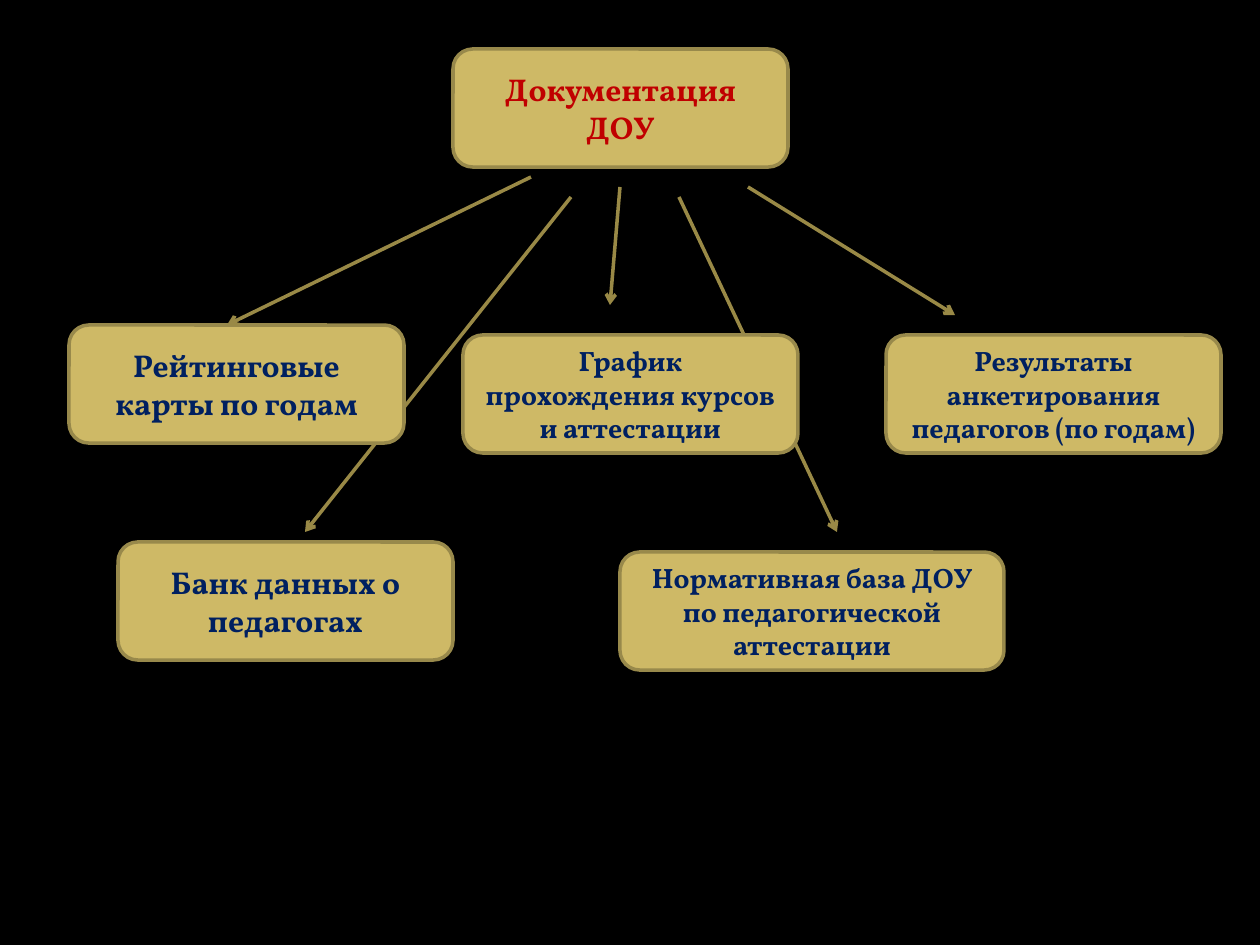
from lxml import etree
from pptx import Presentation
from pptx.dml.color import RGBColor
from pptx.enum.shapes import MSO_CONNECTOR, MSO_SHAPE
from pptx.enum.text import MSO_ANCHOR, PP_ALIGN
from pptx.oxml.ns import qn
from pptx.util import Emu, Pt

LINE, ROUNDED = MSO_CONNECTOR.STRAIGHT, MSO_SHAPE.ROUNDED_RECTANGLE
MIDDLE, CENTER = MSO_ANCHOR.MIDDLE, PP_ALIGN.CENTER
PX = 914400 / 126
RED, NAVY = "C00000", "002060"
GOLD, BORDER, ARROW = "CEB966", "98894B", "998946"
BOX_W, BOX_H = 335, 118


def px(*values):
    return [Emu(round(v * PX)) for v in values]


def rgb(color):
    return RGBColor.from_string(color)


prs = Presentation()
prs.slide_width, prs.slide_height = px(1260, 945)
s = prs.slides.add_slide(prs.slide_layouts[6])
s.background.fill.solid()
s.background.fill.fore_color.rgb = rgb("000000")

# Boxes: left, top, width, text, size, text colour
boxes = [
    (453, 49, BOX_W, "Документация ДОУ", 18, RED),
    (118, 542, BOX_W, "Банк данных о педагогах", 18, NAVY),
    (886, 335, BOX_W, "Результаты анкетирования педагогов (по годам)", 16, NAVY),
    (463, 335, BOX_W, "График прохождения курсов и аттестации", 16, NAVY),
    (69, 325, BOX_W, "Рейтинговые карты по годам", 18, NAVY),
    (620, 552, 384, "Нормативная база ДОУ по педагогической аттестации", 16, NAVY),
]
for x, y, w, text, size, color in boxes:
    box = s.shapes.add_shape(ROUNDED, *px(x, y, w, BOX_H))
    box.shadow.inherit = False
    box.fill.solid()
    box.fill.fore_color.rgb = rgb(GOLD)
    box.line.color.rgb = rgb(BORDER)
    box.line.width = Pt(2)
    tf = box.text_frame
    tf.word_wrap = True
    tf.vertical_anchor = MIDDLE
    p = tf.paragraphs[0]
    p.alignment = CENTER
    r = p.add_run()
    r.text = text
    r.font.name, r.font.size, r.font.bold = "Vollkorn", Pt(size), True
    r.font.color.rgb = rgb(color)

# Arrows: start, end, whether it passes behind the boxes
arrows = [
    (531, 177, 227, 325, False),
    (620, 187, 610, 305, False),
    (748, 187, 955, 315, False),
    (571, 197, 305, 532, True),
    (679, 197, 837, 532, True),
]
for x1, y1, x2, y2, behind in arrows:
    c = s.shapes.add_connector(LINE, *px(x1, y1, x2, y2))
    c.line.color.rgb = rgb(ARROW)
    c.line.width = Pt(2)
    etree.SubElement(c.line._get_or_add_ln(), qn("a:tailEnd"), type="arrow")
    etree.SubElement(c._element.spPr, qn("a:effectLst"))
    if behind:
        s.shapes._spTree.insert(2, c._element)

prs.save("out.pptx")
